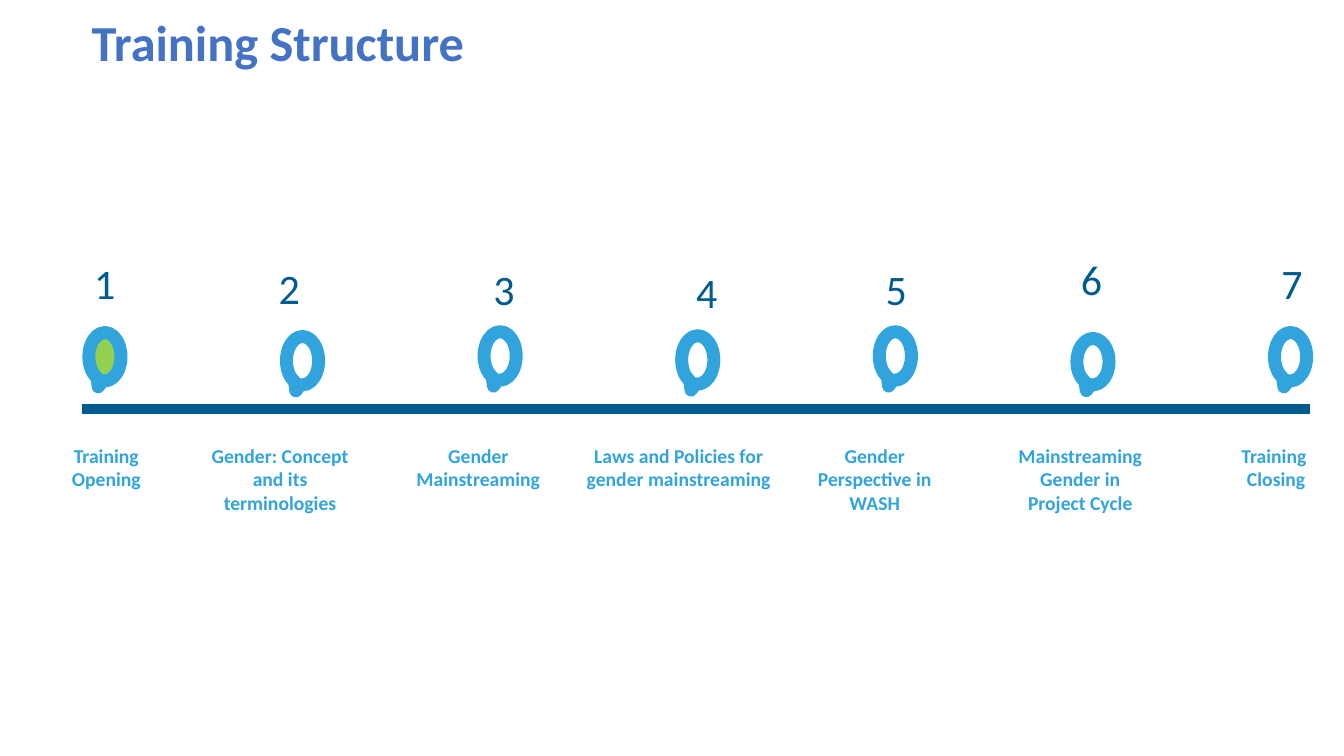
import pptx
import pptx.dml.color
import pptx.enum.shapes
import pptx.enum.text
import pptx.oxml.ns
import pptx.util
from lxml import etree
from pptx.util import Cm

ANCHOR = pptx.enum.text.MSO_ANCHOR
ALIGN = pptx.enum.text.PP_ALIGN
NAVY = "005B8E"
SKY = "31A3DD"
TITLE_BLUE = "4472C4"
GREEN = "92D050"
WHITE = "FFFFFF"


def color(value):
    return pptx.dml.color.RGBColor.from_string(value)


class Timeline:
    font_name = "Calibri"

    def __init__(self, slide):
        self.slide = slide

    def text(self, content, box, size, ink, bold=False, align=ALIGN.CENTER,
             anchor=ANCHOR.TOP, insets=(0.25, 0.13, 0.25, 0.13), grow=False, spacing=None):
        frame = self.slide.shapes.add_textbox(*map(Cm, box)).text_frame
        frame.text = content
        frame.word_wrap = True
        if grow:
            frame.auto_size = pptx.enum.text.MSO_AUTO_SIZE.SHAPE_TO_FIT_TEXT
        frame.vertical_anchor = anchor
        (frame.margin_left, frame.margin_top,
         frame.margin_right, frame.margin_bottom) = map(Cm, insets)
        for paragraph in frame.paragraphs:
            paragraph.alignment = align
            paragraph.line_spacing = spacing
            for run in paragraph.runs:
                run.font.name = self.font_name
                run.font.size = pptx.util.Pt(size)
                run.font.bold = bold
                run.font.color.rgb = color(ink)

    def title(self, content):
        self.text(content, (2.06, 0.1, 30.66, 2.08), 36, TITLE_BLUE, bold=True,
                  align=ALIGN.LEFT, anchor=ANCHOR.MIDDLE, spacing=0.9)

    def number(self, content, box):
        self.text(content, box, 30, NAVY, anchor=ANCHOR.MIDDLE,
                  insets=(0, 0, 0, 0.41), grow=True)

    def label(self, content, left, width):
        self.text(content, (left, 10.8, width, 3), 14, SKY, bold=True,
                  insets=(0.08, 0.38, 0.08, 0))

    def axis(self, left, right, y):
        line = self.slide.shapes.add_connector(
            pptx.enum.shapes.MSO_CONNECTOR.STRAIGHT, Cm(left), Cm(y), Cm(right), Cm(y))
        line.line.color.rgb = color(NAVY)
        line.line.width = pptx.util.Pt(6.75)
        properties = line._element.find(pptx.oxml.ns.qn("p:spPr"))
        etree.SubElement(properties, pptx.oxml.ns.qn("a:effectLst"))

    def pin(self, left, top, height, fill):
        pin = self.slide.shapes.add_shape(
            pptx.enum.shapes.MSO_SHAPE.OVAL_CALLOUT, Cm(left), Cm(top), Cm(0.81), Cm(height))
        pin.adjustments[0] = -0.208
        pin.adjustments[1] = 0.625
        pin.shadow.inherit = False
        pin.fill.solid()
        pin.fill.fore_color.rgb = color(fill)
        pin.line.color.rgb = color(SKY)
        pin.line.width = pptx.util.Pt(9.25)


STAGES = [
    ("Training Opening", (1.5, 2.36), (1.6, 6.5, 2.08, 1.68), (8.38, 1.22, GREEN)),
    ("Gender: Concept and its terminologies", (4.85, 4.42),
     (6.58, 6.58, 1.42, 1.73), (8.48, 1.22, WHITE)),
    ("Gender Mainstreaming", (10.29, 3.53), (11.81, 6.63, 1.78, 1.68), (8.36, 1.22, WHITE)),
    ("Laws and Policies for gender mainstreaming", (14.63, 4.95),
     (16.97, 6.71, 1.68, 1.68), (8.46, 1.22, WHITE)),
    ("Gender Perspective in WASH", (20.19, 3.71),
     (21.69, 6.65, 1.8, 1.68), (8.36, 1.22, WHITE)),
    ("Mainstreaming Gender in Project Cycle", (25.37, 3.71),
     (26.26, 6.27, 2.49, 1.91), (8.53, 1.17, WHITE)),
    ("Training\n Closing", (30.25, 3.71), (31.52, 6.48, 2.08, 1.68), (8.38, 1.22, WHITE)),
]
FIRST_PIN = 2.24
PIN_STEP = 4.98


def main():
    deck = pptx.Presentation()
    deck.slide_width = Cm(33.87)
    deck.slide_height = Cm(19.05)
    timeline = Timeline(deck.slides.add_slide(deck.slide_layouts[6]))
    timeline.title("Training Structure")
    timeline.axis(2.06, 33.02, 10.31)
    for index, (topic, label_span, number_box, pin_style) in enumerate(STAGES):
        timeline.number(str(index + 1), number_box)
        timeline.label(topic, *label_span)
        timeline.pin(FIRST_PIN + index * PIN_STEP, *pin_style)
    deck.save("out.pptx")


if __name__ == "__main__":
    main()
